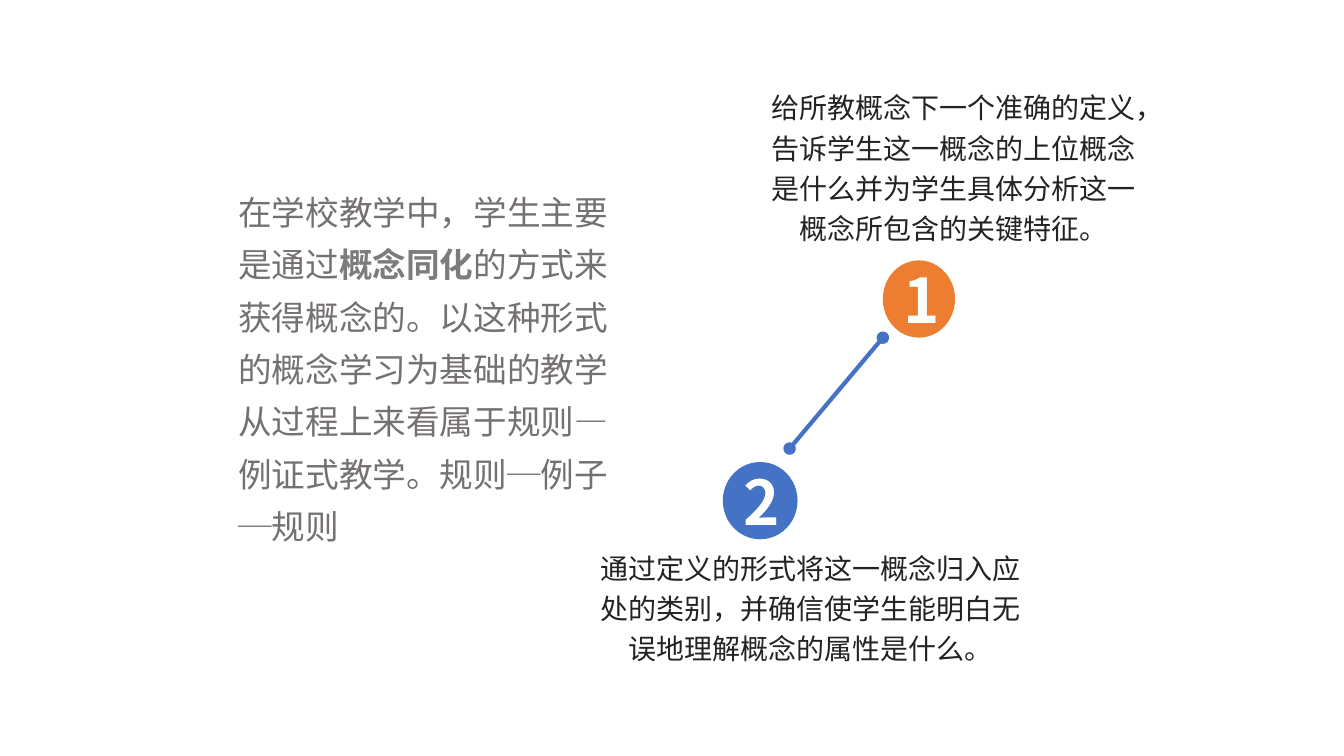
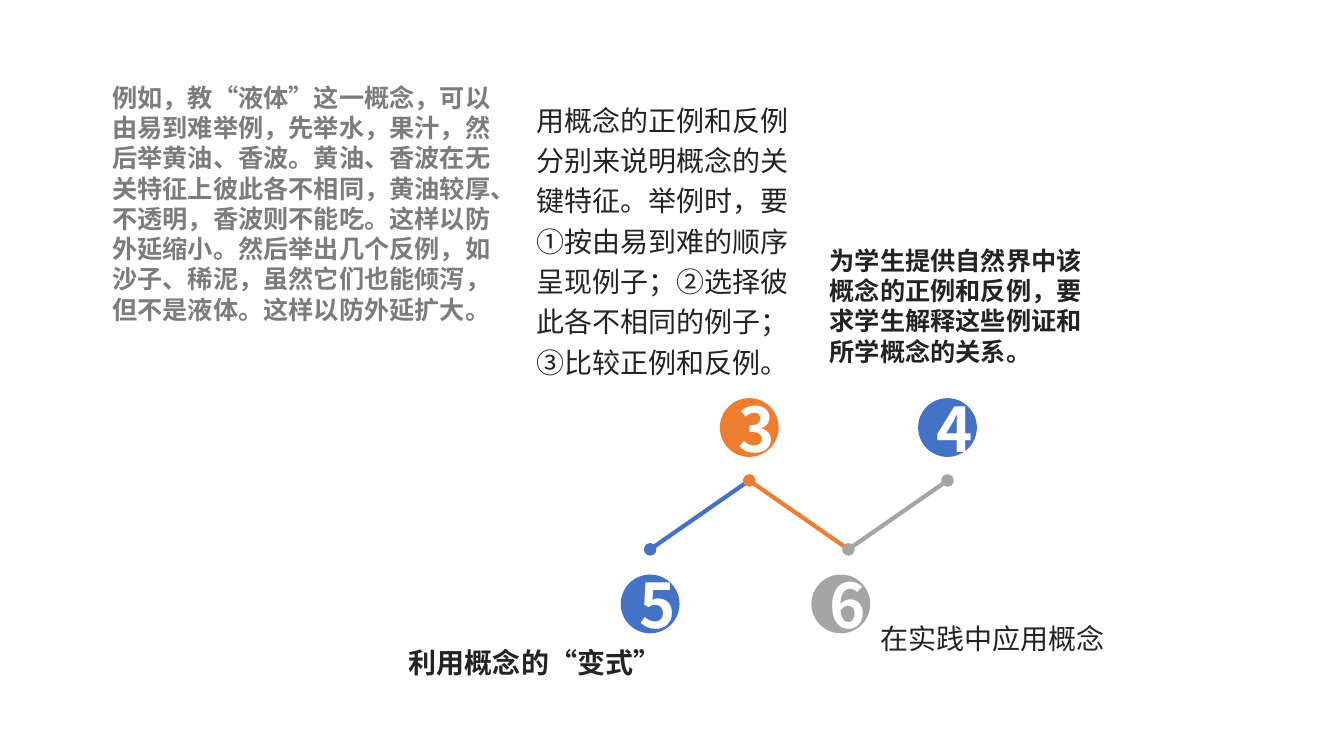
from pptx import Presentation
from pptx.dml.color import RGBColor
from pptx.enum.shapes import MSO_CONNECTOR as Link, MSO_SHAPE as Form
from pptx.enum.text import MSO_ANCHOR as Anchor, MSO_AUTO_SIZE as Fit, PP_ALIGN as Align
from pptx.oxml.ns import qn
from pptx.oxml.xmlchemy import OxmlElement as Tag
from pptx.util import Inches, Pt

BLUE = RGBColor(0x44, 0x72, 0xC4)
ORANGE = RGBColor(0xED, 0x7D, 0x31)
GREY = RGBColor(0xA5, 0xA5, 0xA5)
INK = RGBColor(0x22, 0x23, 0x24)
SOFT = RGBColor(0x76, 0x71, 0x71)
MUTED = RGBColor(0x7C, 0x7C, 0x7C)
WHITE = RGBColor(0xFF, 0xFF, 0xFF)
LATIN, HAN = "Arial", "Noto Sans CJK SC"


class Deck:
    """Style and current slide; lengths count cells of a 16 by 9 grid."""

    def __init__(self):
        self.prs = Presentation()
        self.prs.slide_width, self.prs.slide_height = Inches(13.333), Inches(7.5)
        self.cell = self.prs.slide_height / 9
        self.slide = None

    def page(self):
        self.slide = self.prs.slides.add_slide(self.prs.slide_layouts[6])

    def grid(self, *cells):
        return [round(n * self.cell) for n in cells]

    def style(self, para, size, color, bold=False, face=HAN):
        font = para.font
        font.size, font.bold, font.name = Pt(size), bold, face
        font.color.rgb = color
        east = Tag("a:ea")
        east.set("typeface", HAN)
        para._p.pPr.find(qn("a:defRPr")).find(qn("a:latin")).addnext(east)

    def text(self, box, parts, size=20, color=INK, bold=False, face=LATIN,
             gap=None, wrap=True):
        """Add a text box; parts is a string or (words, strong) pairs."""
        frame = self.slide.shapes.add_textbox(*self.grid(*box)).text_frame
        frame.word_wrap = wrap
        frame.auto_size = Fit.SHAPE_TO_FIT_TEXT
        para = frame.paragraphs[0]
        self.style(para, size, color, bold, face)
        if gap:
            para.line_spacing = gap
        pairs = [(parts, False)] if isinstance(parts, str) else parts
        for words, strong in pairs:
            run = para.add_run()
            run.text = words
            if strong:
                run.font.bold = True
                run.font.color.rgb = MUTED
        return frame

    def label(self, box, words):
        """Add a centred caption without side margins."""
        frame = self.text(box, words, gap=1.2)
        frame.auto_size = Fit.NONE
        frame.vertical_anchor = Anchor.MIDDLE
        frame.margin_left = frame.margin_right = 0
        frame.paragraphs[0].alignment = Align.CENTER

    def badge(self, mid, digit, color, wide=0.7, high=0.7):
        """Add a numbered disc around its middle."""
        x, y = mid
        box = self.grid(x - wide / 2, y - high / 2, wide, high)
        disc = self.slide.shapes.add_shape(Form.OVAL, *box)
        disc.shadow.inherit = False
        disc.fill.solid()
        disc.fill.fore_color.rgb = color
        disc.line.fill.background()
        frame = disc.text_frame
        frame.text = digit
        frame.vertical_anchor = Anchor.MIDDLE
        para = frame.paragraphs[0]
        para.alignment = Align.CENTER
        self.style(para, 44, WHITE, True)

    def link(self, start, end, color, ends=("headEnd",)):
        """Add a line with round dots at the given ends."""
        line = self.slide.shapes.add_connector(
            Link.STRAIGHT, *self.grid(*start, *end))
        line.line.width = Pt(3)
        line.line.color.rgb = color
        props = line._element.spPr
        for name in ends:
            dot = Tag("a:" + name)
            dot.set("type", "oval")
            props.find(qn("a:ln")).append(dot)
        props.append(Tag("a:effectLst"))


BOTH = ("headEnd", "tailEnd")


def define(deck):
    deck.page()
    # Steps one and two
    deck.link((9.4, 5.34), (10.51, 4.02), BLUE, BOTH)
    deck.badge((9.05, 5.96), "2", BLUE, 0.89, 0.92)
    deck.label((7, 6.42, 5.3, 1.56),
               "通过定义的形式将这一概念归入应处的类别，并确信使学生能明白无误地理解概念的属性是什么。")
    deck.badge((10.94, 3.56), "1", ORANGE, 0.86, 0.92)
    deck.label((9.17, 1.26, 4.36, 1.4),
               "给所教概念下一个准确的定义，告诉学生这一概念的上位概念是什么并为学生具体分析这一概念所包含的关键特征。")
    # Main passage
    deck.text((2.72, 2.08, 4.75, 4.49), [
        ("在学校教学中，学生主要是通过", False),
        ("概念同化", True),
        ("的方式来获得概念的。以这种形式的概念学习为基础的教学从过程上来看属于规则—例证式教学。规则─例子─规则", False),
    ], 24, SOFT, face=HAN, gap=1.3)


def apply(deck):
    deck.page()
    # Zigzag with dots at equal steps
    left, step, high, low = 7.74, 1.18, 5.72, 6.54
    dots = [(left + i * step, high if i % 2 else low) for i in range(4)]
    ends = [BOTH[:1], BOTH[:1], BOTH]
    for start, end, color, tips in zip(dots, dots[1:], (BLUE, ORANGE, GREY), ends):
        deck.link(start, end, color, tips)
    # Numbers above and below the dots
    top, base = 5.09, 7.19
    deck.badge((dots[0][0], base), "5", BLUE)
    deck.badge((10.01, base), "6", GREY)
    deck.badge((dots[1][0], top), "3", ORANGE)
    deck.badge((dots[3][0], top), "4", BLUE)
    # Captions
    deck.label((6.23, 0.92, 3.32, 3.82),
               "用概念的正例和反例分别来说明概念的关键特征。举例时，要①按由易到难的顺序呈现例子；②选择彼此各不相同的例子；③比较正例和反例。")
    deck.text((9.76, 2.86, 3.34, 1.56),
              "为学生提供自然界中该概念的正例和反例，要求学生解释这些例证和所学概念的关系。", 18, bold=True)
    deck.text((4.75, 7.63, 3.34, 0.52), "利用概念的“变式”", bold=True)
    deck.text((10.36, 7.42, 2.94, 0.44), "在实践中应用概念",
              face=HAN, gap=0.8, wrap=False)
    # Worked example
    deck.text((1.22, 0.92, 4.8, 3.4),
              "例如，教“液体”这一概念，可以由易到难举例，先举水，果汁，然后举黄油、香波。"
              "黄油、香波在无关特征上彼此各不相同，黄油较厚、不透明，香波则不能吃。这样以防外延缩小。"
              "然后举出几个反例，如沙子、稀泥，虽然它们也能倾泻，但不是液体。这样以防外延扩大。",
              18, MUTED, True, HAN)


def main():
    deck = Deck()
    define(deck)
    apply(deck)
    deck.prs.save("out.pptx")


if __name__ == "__main__":
    main()
